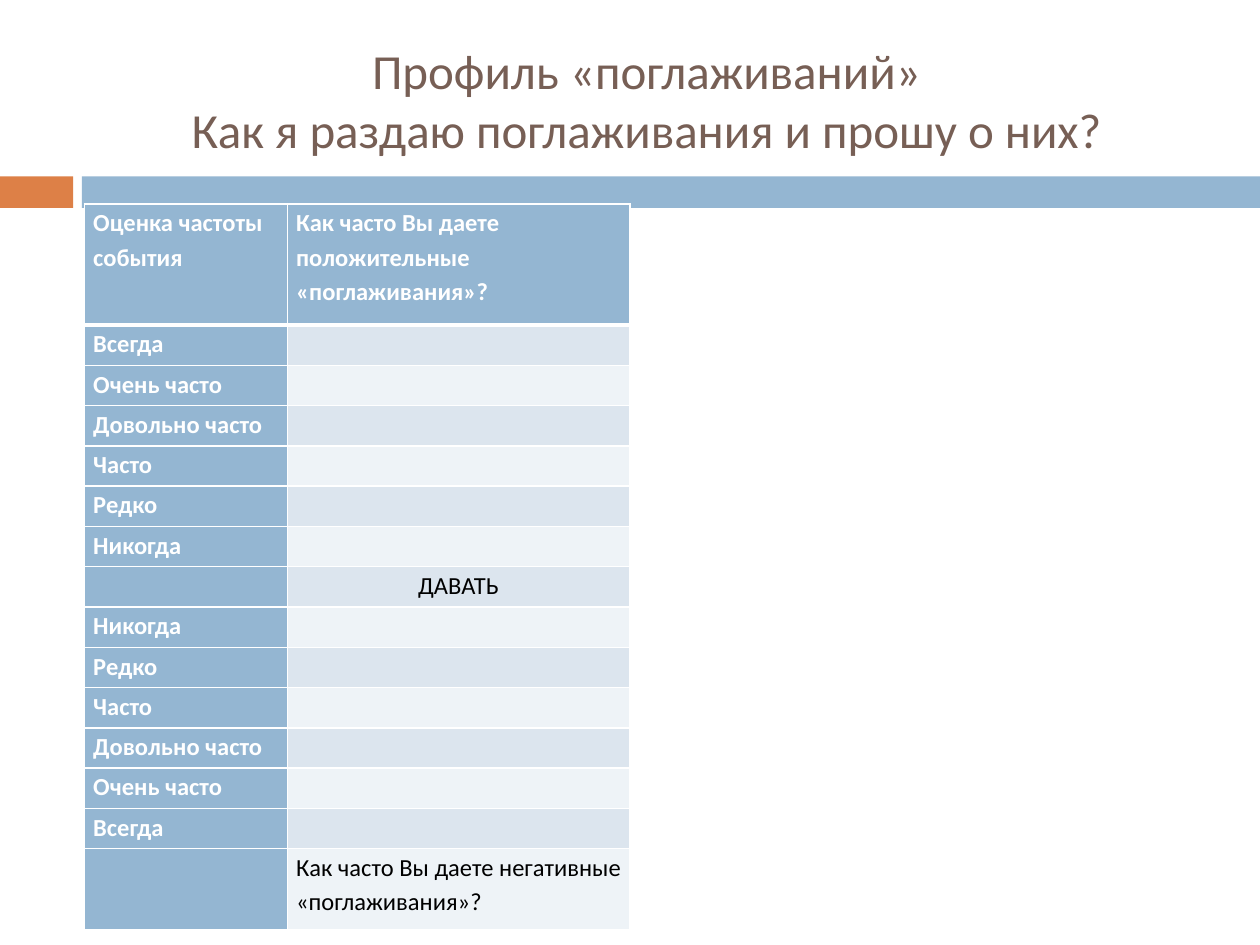
from lxml.etree import SubElement, Element
from pptx import Presentation
from pptx.dml.color import RGBColor
from pptx.enum.shapes import MSO_SHAPE
from pptx.enum.text import MSO_ANCHOR, MSO_AUTO_SIZE, PP_ALIGN
from pptx.oxml.ns import qn
from pptx.util import Inches, Pt

ORANGE = RGBColor(0xDD, 0x80, 0x47)
BLUE = RGBColor(0x94, 0xB6, 0xD2)
BROWN = RGBColor(0x77, 0x5F, 0x55)
WHITE = RGBColor(0xFF, 0xFF, 0xFF)
BLACK = RGBColor(0, 0, 0)
BANDS = (RGBColor(0xEE, 0xF3, 0xF7), RGBColor(0xDC, 0xE5, 0xEE))
FONT = "Calibri"

TITLE = "Профиль «поглаживаний»\vКак я раздаю поглаживания и прошу о них?"
SCALE = ["Всегда", "Очень часто", "Довольно часто", "Часто", "Редко", "Никогда"]
ROWS = [
    ("Оценка частоты события", "Как часто Вы даете положительные «поглаживания»?"),
    *((step, "") for step in SCALE),
    ("", "ДАВАТЬ"),
    *((step, "") for step in reversed(SCALE)),
    ("", "Как часто Вы даете негативные «поглаживания»?"),
]
LINE = 0.32
COL_WIDTHS = (1.61, 2.72)
ROW_HEIGHTS = [3 * LINE] + [LINE] * (len(ROWS) - 2) + [2 * LINE]
BARS = [(0, 0.58, ORANGE), (0.65, 9.35, BLUE)]


def style_runs(p, size, color, bold=False):
    for r in p.runs:
        r.font.name, r.font.size, r.font.bold = FONT, Pt(size), bold
        r.font.color.rgb = color


def set_borders(cell, **widths):
    """Draw white cell borders; widths are points keyed by L, R, T, B in that order."""
    tc_pr = cell._tc.get_or_add_tcPr()
    for i, (side, width) in enumerate(widths.items()):
        ln = Element(qn(f"a:ln{side}"), w=str(Pt(width)))
        SubElement(SubElement(ln, qn("a:solidFill")), qn("a:srgbClr"), val=str(WHITE))
        tc_pr.insert(i, ln)


def add_title(slide):
    title = slide.shapes.title
    title.left, title.top = Inches(0.67), Inches(0.25)
    title.width, title.height = Inches(8.92), Inches(1.08)
    tf = title.text_frame
    tf.auto_size, tf.vertical_anchor = MSO_AUTO_SIZE.NONE, MSO_ANCHOR.MIDDLE
    p = tf.paragraphs[0]
    p.text, p.alignment = TITLE, PP_ALIGN.CENTER
    style_runs(p, 28, BROWN)
    for br in p._p.findall(qn("a:br")):
        SubElement(br, qn("a:rPr"), sz="2800")


def add_bars(slide):
    for left, width, color in BARS:
        sp = slide.shapes.add_shape(MSO_SHAPE.RECTANGLE, Inches(left), Inches(1.4),
                                    Inches(width), Inches(0.25))
        sp.shadow.inherit = False
        sp.fill.solid()
        sp.fill.fore_color.rgb = color
        sp.line.fill.background()


def fill_cell(cell, text, row, col):
    heading = row == 0 or col == 0
    cell.margin_left = cell.margin_right = Inches(0.07)
    cell.margin_top = cell.margin_bottom = 0
    cell.fill.solid()
    cell.fill.fore_color.rgb = BLUE if heading else BANDS[row % 2]
    set_borders(cell, L=1, R=1, T=3 if row == 1 else 1, B=3 if row == 0 else 1)
    p = cell.text_frame.paragraphs[0]
    if not text:
        p._p.get_or_add_endParaRPr().set("sz", "1400")
        return
    p.text, p.line_spacing = text, 1.15
    if text.isupper():
        p.alignment = PP_ALIGN.CENTER
    style_runs(p, 14, WHITE if heading else BLACK, bold=heading)


def add_frequency_table(slide):
    table = slide.shapes.add_table(
        len(ROWS), len(COL_WIDTHS), Inches(0.67), Inches(1.62),
        Inches(sum(COL_WIDTHS)), Inches(sum(ROW_HEIGHTS))).table
    for column, width in zip(table.columns, COL_WIDTHS):
        column.width = Inches(width)
    for i, (texts, height) in enumerate(zip(ROWS, ROW_HEIGHTS)):
        table.rows[i].height = Inches(height)
        for j, text in enumerate(texts):
            fill_cell(table.cell(i, j), text, i, j)


def main():
    prs = Presentation()
    prs.slide_width, prs.slide_height = Inches(10), Inches(7.5)
    slide = prs.slides.add_slide(prs.slide_layouts[5])
    add_bars(slide)
    add_title(slide)
    add_frequency_table(slide)
    prs.save("out.pptx")


if __name__ == "__main__":
    main()
